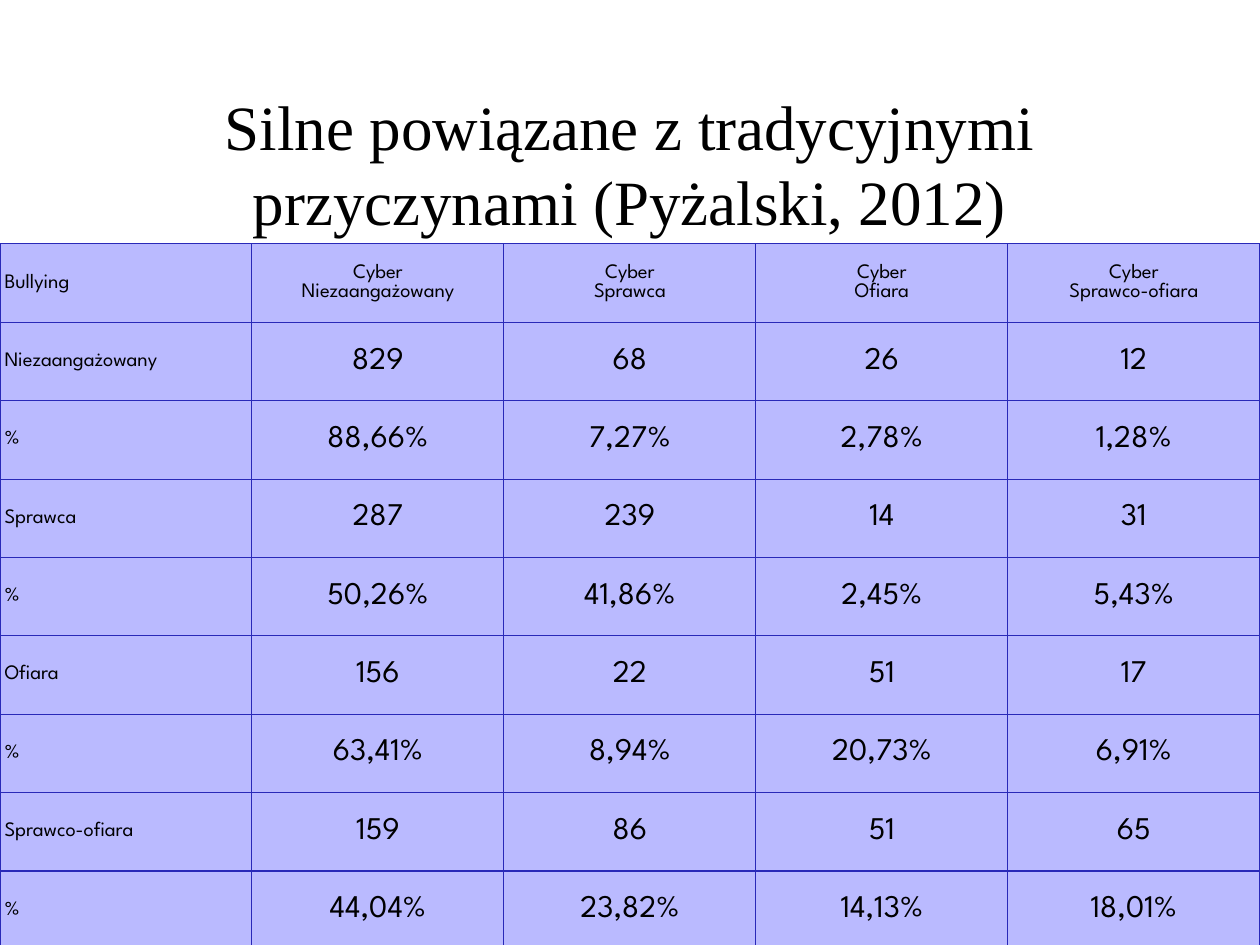
from lxml import etree
from pptx import Presentation, util as u
from pptx.dml import color
from pptx.enum import text
from pptx.oxml import ns

COLORS = {"text": "000000", "cell": "BABAFF", "border": "2929B8"}
HEADINGS = ["Bullying", "Cyber\nNiezaangażowany", "Cyber\nSprawca",
            "Cyber\nOfiara", "Cyber\nSprawco-ofiara"]
RESULTS = [
    ["Niezaangażowany", "829", "68", "26", "12"],
    ["%", "88,66%", "7,27%", "2,78%", "1,28%"],
    ["Sprawca", "287", "239", "14", "31"],
    ["%", "50,26%", "41,86%", "2,45%", "5,43%"],
    ["Ofiara", "156", "22", "51", "17"],
    ["%", "63,41%", "8,94%", "20,73%", "6,91%"],
    ["Sprawco-ofiara", "159", "86", "51", "65"],
    ["%", "44,04%", "23,82%", "14,13%", "18,01%"],
]


class SlideBuilder:
    title_font = "Times New Roman"
    table_font = "League Spartan"

    def __init__(self, slide):
        self.slide = slide

    def format_text(self, frame, font, size, align):
        for paragraph in frame.paragraphs:
            paragraph.alignment = align
            for run in paragraph.runs:
                run.font.name = font
                run.font.size = u.Pt(size)
                run.font.color.rgb = color.RGBColor.from_string(COLORS["text"])

    def title(self, wording, left, top, width, height):
        heading = self.slide.shapes.add_textbox(
            *map(u.Inches, (left, top, width, height))).text_frame
        heading.word_wrap = True
        heading.vertical_anchor = text.MSO_ANCHOR.MIDDLE
        heading.margin_left = heading.margin_right = u.Inches(0.11)
        heading.margin_top = heading.margin_bottom = u.Inches(0.06)
        heading.text = wording
        self.format_text(heading, self.title_font, 40, text.PP_ALIGN.CENTER)

    def borders(self, cell):
        properties = cell._tc.get_or_add_tcPr()
        for side in ("L", "R", "T", "B"):
            line = etree.SubElement(properties, ns.qn(f"a:ln{side}"), w=str(u.Pt(0.75)))
            fill = etree.SubElement(line, ns.qn("a:solidFill"))
            etree.SubElement(fill, ns.qn("a:srgbClr"), val=COLORS["border"])

    def cell(self, cell, wording, size, align):
        cell.text_frame.text = wording
        cell.vertical_anchor = text.MSO_ANCHOR.MIDDLE
        cell.margin_left = cell.margin_right = u.Inches(0.04)
        cell.margin_top = cell.margin_bottom = u.Inches(0.04)
        self.borders(cell)
        cell.fill.solid()
        cell.fill.fore_color.rgb = color.RGBColor.from_string(COLORS["cell"])
        self.format_text(cell.text_frame, self.table_font, size, align)

    def table(self, rows, left, top, width, height):
        grid = self.slide.shapes.add_table(
            len(rows), len(rows[0]), *map(u.Inches, (left, top, width, height))).table
        grid.first_row = grid.horz_banding = False
        for r, row in enumerate(rows):
            for c, wording in enumerate(row):
                size = 20 if r and c else 13
                align = text.PP_ALIGN.CENTER if c else text.PP_ALIGN.LEFT
                self.cell(grid.cell(r, c), wording, size, align)


def main():
    deck = Presentation()
    deck.slide_width, deck.slide_height = u.Inches(11.11), u.Inches(8.33)
    builder = SlideBuilder(deck.slides.add_slide(deck.slide_layouts[6]))
    builder.title("Silne powiązane z tradycyjnymi przyczynami (Pyżalski, 2012)",
                  0.83, 0.74, 9.44, 1.39)
    builder.table([HEADINGS] + RESULTS, 0, 2.15, 11.11, 6.22)
    deck.save("out.pptx")


if __name__ == "__main__":
    main()
